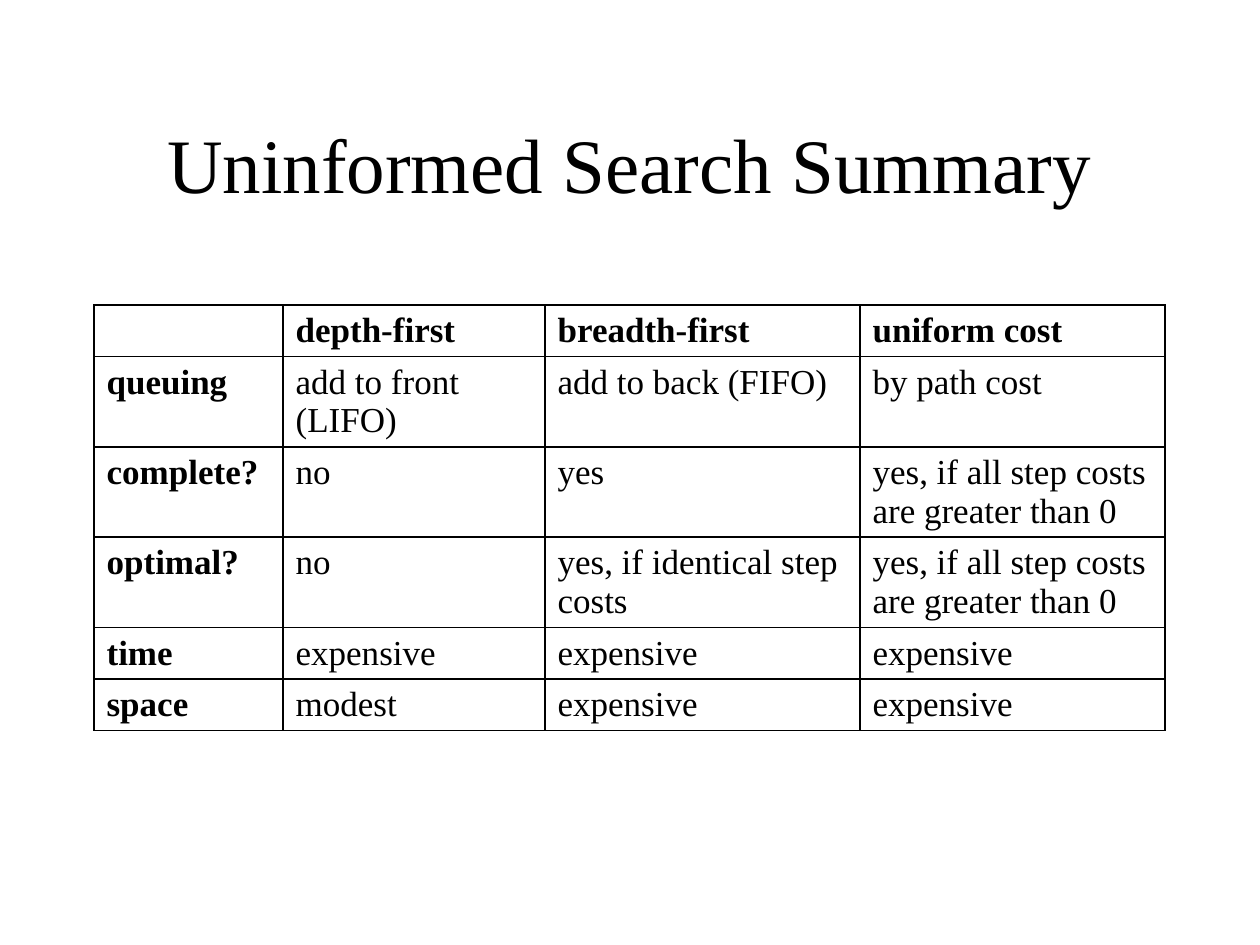
from pptx import Presentation
from pptx import util as u
from pptx.dml import color
from pptx.enum import text
from pptx.oxml import parse_xml
from pptx.oxml.ns import nsdecls

PX = 914400 / 126
HUES = {"ink": "000000", "page": "FFFFFF"}


def px(n):
    return u.Emu(round(n * PX))


def write(frame, words, size=20, bold=False, align=text.PP_ALIGN.LEFT):
    para = frame.paragraphs[0]
    para.alignment = align
    run = para.add_run()
    run.text = words
    font = run.font
    font.name = "Times New Roman"
    font.size = u.Pt(size)
    font.bold = bold
    font.color.rgb = color.RGBColor.from_string(HUES["ink"])


deck = Presentation()
deck.slide_width = px(1260)
deck.slide_height = px(945)
slide = deck.slides.add_slide(deck.slide_layouts[5])

title = slide.shapes.title
title.left, title.top, title.width, title.height = px(94), px(84), px(1071), px(158)
title.text_frame.vertical_anchor = text.MSO_ANCHOR.MIDDLE
write(title.text_frame, "Uninformed Search Summary", size=44, align=text.PP_ALIGN.CENTER)

rows = [
    ["", "depth-first", "breadth-first", "uniform cost"],
    ["queuing", "add to front (LIFO)", "add to back (FIFO)", "by path cost"],
    ["complete?", "no", "yes", "yes, if all step costs are greater than 0"],
    ["optimal?", "no", "yes, if identical step costs", "yes, if all step costs are greater than 0"],
    ["time", "expensive", "expensive", "expensive"],
    ["space", "modest", "expensive", "expensive"],
]
wide = [189, 262, 315, 305]
high = [51, 90, 90, 90, 51, 51]

frame = slide.shapes.add_table(
    len(rows), len(wide), px(94), px(305), px(sum(wide)), px(sum(high))
)
table = frame.table
table.first_row = False
table.horz_banding = False
for col, w in zip(table.columns, wide):
    col.width = px(w)
for row, h in zip(table.rows, high):
    row.height = px(h)

for r, row in enumerate(rows):
    for c, words in enumerate(row):
        cell = table.cell(r, c)
        write(cell.text_frame, words, bold=r == 0 or c == 0)
        props = cell._tc.get_or_add_tcPr()
        for side in "LRTB":
            props.append(parse_xml(
                f'<a:ln{side} {nsdecls("a")} w="{u.Pt(1)}"><a:solidFill>'
                f'<a:srgbClr val="{HUES["ink"]}"/></a:solidFill></a:ln{side}>'
            ))
        cell.fill.solid()
        cell.fill.fore_color.rgb = color.RGBColor.from_string(HUES["page"])

deck.save("out.pptx")
